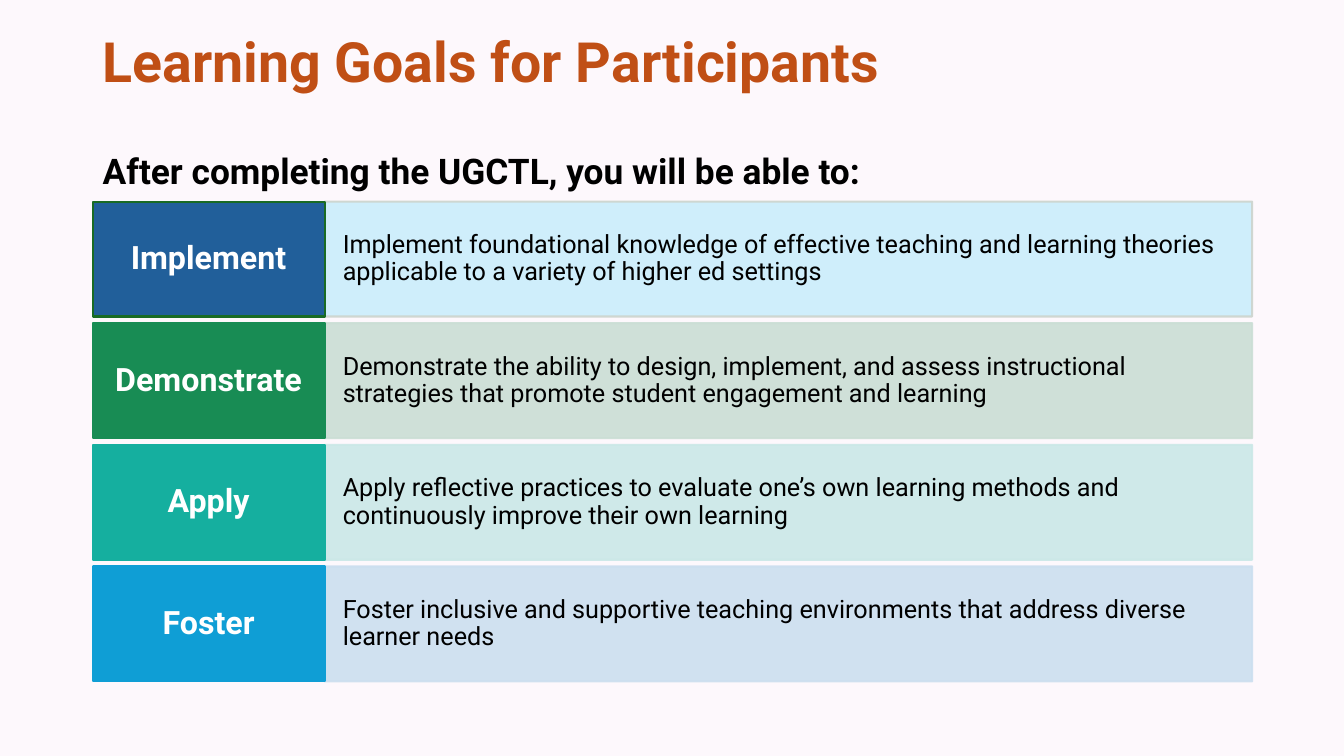
"""Build the slide of learning goals: a heading over four labelled rows."""
from dataclasses import dataclass

from lxml import etree
from pptx import Presentation
from pptx.dml.color import RGBColor
from pptx.dml.fill import FillFormat
from pptx.enum import shapes, text
from pptx.oxml import ns
from pptx.util import Inches, Pt

FONT = "Roboto"
LEFT, SPLIT, RIGHT = 0.92, 3.22, 12.42
TOP, SPAN, HIGH = 2, 3.62, 1.14


@dataclass
class Goal:
    verb: str
    aim: str
    dark: str
    edge: str
    pale: str
    rim: str


@dataclass
class Style:
    size: float
    color: str
    bold: bool
    align: text.PP_ALIGN
    pad: tuple[float, float]
    alpha: int


LABEL = Style(23, "FFFFFF", True, text.PP_ALIGN.CENTER, (0.12, 0.11), 100)
BODY = Style(18, "000000", False, text.PP_ALIGN.LEFT, (0.18, 0.29), 90)

GOALS = [
    Goal("Implement",
         "Implement foundational knowledge of effective teaching and learning "
         "theories applicable to a variety of higher ed settings",
         "215F9A", "196B24", "CAEEFB", "CCD4CD"),
    Goal("Demonstrate",
         "Demonstrate the ability to design, implement, and assess instructional "
         "strategies that promote student engagement and learning",
         "188C54", "188C54", "CBDED5", "CBDED5"),
    Goal("Apply",
         "Apply reflective practices to evaluate one’s own learning methods and "
         "continuously improve their own learning",
         "15AF9F", "15AF9F", "CBE8E7", "CBE8E7"),
    Goal("Foster",
         "Foster inclusive and supportive teaching environments that address "
         "diverse learner needs",
         "0F9ED5", "0F9ED5", "CCDFEF", "CCDFEF"),
]


def paint(fill: FillFormat, color: str) -> None:
    fill.solid()
    fill.fore_color.rgb = RGBColor.from_string(color)


def write(para, words: str, size: float, color: str, bold: bool) -> None:
    para.text = words
    para.line_spacing = 0.9
    font = para.font
    font.name, font.size, font.bold = FONT, Pt(size), bold
    paint(font.fill, color)


def fade(shape, alpha: int) -> None:
    for tone in shape._element.spPr.iter(ns.qn("a:srgbClr")):
        etree.SubElement(tone, ns.qn("a:alpha"), val=str(alpha * 1000))


def panel(slide, left: float, top: float, wide: float, words: str,
          color: str, line: str, style: Style) -> None:
    box = slide.shapes.add_shape(shapes.MSO_SHAPE.RECTANGLE, Inches(left),
                                 Inches(top), Inches(wide), Inches(HIGH))
    box.shadow.inherit = False
    paint(box.fill, color)
    paint(box.line.fill, line)
    box.line.width = Pt(1.5)
    if style.alpha < 100:
        fade(box, style.alpha)
    frame = box.text_frame
    frame.word_wrap = True
    frame.vertical_anchor = text.MSO_ANCHOR.MIDDLE
    side, edge = map(Inches, style.pad)
    frame.margin_left = frame.margin_right = side
    frame.margin_top = frame.margin_bottom = edge
    para = frame.paragraphs[0]
    para.alignment = style.align
    write(para, words, style.size, style.color, style.bold)


def heading(slide) -> None:
    box = slide.shapes.add_textbox(Inches(LEFT), Inches(0.4), Inches(11.5), Inches(1.45))
    frame = box.text_frame
    frame.word_wrap = True
    frame.vertical_anchor = text.MSO_ANCHOR.MIDDLE
    write(frame.paragraphs[0], "Learning Goals for Participants", 39.6, "C04F15", True)
    para = frame.add_paragraph()
    para.space_before = Pt(42)
    write(para, "After completing the UGCTL, you will be able to:", 25.2, "000000", True)


def main() -> None:
    deck = Presentation()
    deck.slide_width, deck.slide_height = Inches(13.33), Inches(7.5)
    slide = deck.slides.add_slide(deck.slide_layouts[6])
    paint(slide.background.fill, "FDF8FC")
    heading(slide)
    for i, goal in enumerate(GOALS):
        top = TOP + SPAN * i / (len(GOALS) - 1)
        panel(slide, SPLIT, top, RIGHT - SPLIT, goal.aim, goal.pale, goal.rim, BODY)
        panel(slide, LEFT, top, SPLIT - LEFT, goal.verb, goal.dark, goal.edge, LABEL)
    deck.save("out.pptx")


if __name__ == "__main__":
    main()
